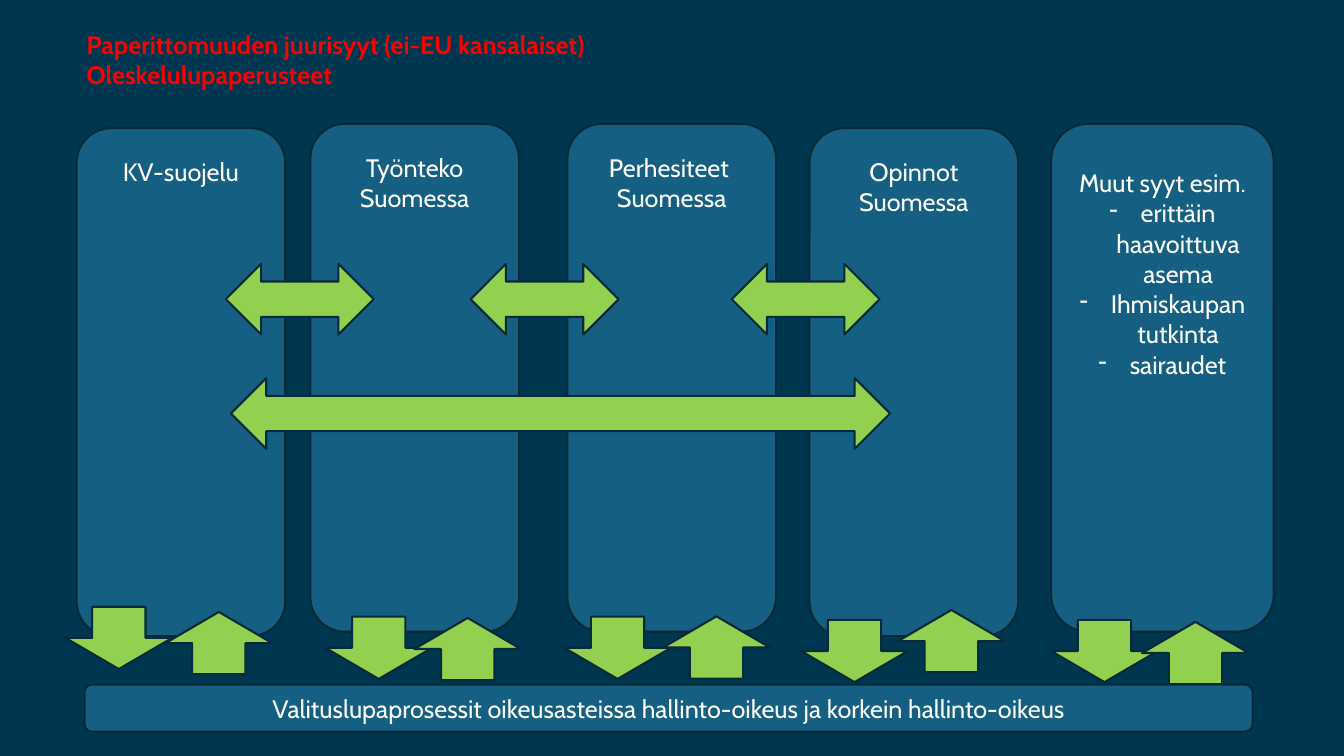
from dataclasses import dataclass

from lxml import etree
from pptx import Presentation
from pptx.dml.color import RGBColor
from pptx.enum.shapes import MSO_SHAPE
from pptx.enum.text import MSO_ANCHOR, MSO_AUTO_SIZE, PP_ALIGN
from pptx.oxml.ns import qn
from pptx.shapes.autoshape import Shape
from pptx.slide import Slide
from pptx.util import Cm, Pt

ROUNDED = MSO_SHAPE.ROUNDED_RECTANGLE
SIDEWAYS = MSO_SHAPE.LEFT_RIGHT_ARROW
DOWNWARD = MSO_SHAPE.DOWN_ARROW
LEFT, CENTER = PP_ALIGN.LEFT, PP_ALIGN.CENTER
TOP, MIDDLE = MSO_ANCHOR.TOP, MSO_ANCHOR.MIDDLE
FIT_SHAPE = MSO_AUTO_SIZE.SHAPE_TO_FIT_TEXT

NAVY = RGBColor(0x00, 0x37, 0x50)
BLUE = RGBColor(0x15, 0x60, 0x82)
OUTLINE = RGBColor(0x09, 0x2A, 0x39)
GREEN = RGBColor(0x92, 0xD0, 0x50)
RED = RGBColor(0xFF, 0x00, 0x00)
WHITE = RGBColor(0xFF, 0xFF, 0xFF)

FONT = "Cabin"
TEXT_SIZE = Pt(18)
BULLET_INDENT = Cm(0.79)
PILLAR_HEIGHT = 12.8


@dataclass(frozen=True)
class Box:
    left: float
    top: float
    width: float
    height: float


@dataclass(frozen=True)
class Pillar:
    left: float
    top: float
    lines: tuple[str, ...]
    bullets: tuple[str, ...] = ()
    width: float = 5.26
    text_margin: float = 0.46


@dataclass(frozen=True)
class AppealArrow:
    left: float
    top: float
    rotation: int = 0


TITLE = (
    "Paperittomuuden juurisyyt (ei-EU kansalaiset)",
    "Oleskelulupaperusteet",
)
TITLE_BOX = Box(1.93, 0.61, 13.94, 1.8)

PILLARS = (
    Pillar(1.93, 3.23, ("KV-suojelu",)),
    Pillar(7.82, 3.12, ("Työnteko Suomessa",)),
    Pillar(14.3, 3.12, ("Perhesiteet ", "Suomessa")),
    Pillar(20.4, 3.23, ("Opinnot Suomessa",)),
    Pillar(
        26.49,
        3.12,
        ("Muut syyt esim.",),
        ("erittäin haavoittuva asema", "Ihmiskaupan tutkinta", "sairaudet"),
        width=5.61,
        text_margin=0.83,
    ),
)

LINK_ARROWS = (
    *(Box(left, 6.65, 3.73, 1.78) for left in (5.69, 11.86, 18.44)),
    Box(5.82, 9.53, 16.61, 1.78),
)

APPEAL_ARROWS = (
    AppealArrow(1.65, 15.29),
    AppealArrow(8.2, 15.54),
    AppealArrow(14.22, 15.54),
    AppealArrow(20.19, 15.62),
    AppealArrow(26.49, 15.62),
    AppealArrow(4.17, 15.42, 180),
    AppealArrow(10.44, 15.57, 180),
    AppealArrow(16.71, 15.53, 180),
    AppealArrow(22.63, 15.37, 180),
    AppealArrow(28.78, 15.67, 180),
)

APPEALS = "Valituslupaprosessit oikeusasteissa hallinto-oikeus ja korkein hallinto-oikeus"
APPEALS_BOX = Box(2.13, 17.25, 29.44, 1.19)


def write_text(
    shape: Shape,
    lines: tuple[str, ...],
    *,
    bullets: tuple[str, ...] = (),
    color: RGBColor = WHITE,
    bold: bool = False,
    align: PP_ALIGN = CENTER,
    anchor: MSO_ANCHOR = MIDDLE,
    wrap: bool = True,
    top_margin: float = 0.13,
) -> None:
    frame = shape.text_frame
    frame.text = "\n".join(lines + bullets)
    frame.word_wrap = wrap
    frame.vertical_anchor = anchor
    frame.margin_top = Cm(top_margin)
    for index, paragraph in enumerate(frame.paragraphs):
        paragraph.alignment = align
        paragraph.line_spacing = 1.0
        paragraph.space_before = Pt(0)
        for run in paragraph.runs:
            run.font.name = FONT
            run.font.size = TEXT_SIZE
            run.font.bold = bold
            run.font.color.rgb = color
        if index >= len(lines):
            properties = paragraph._p.get_or_add_pPr()
            properties.set("marL", str(BULLET_INDENT))
            properties.set("indent", str(-BULLET_INDENT))
            etree.SubElement(properties, qn("a:buChar")).set("char", "-")


def add_block(slide: Slide, kind: MSO_SHAPE, box: Box, fill: RGBColor) -> Shape:
    shape = slide.shapes.add_shape(
        kind, Cm(box.left), Cm(box.top), Cm(box.width), Cm(box.height)
    )
    shape.shadow.inherit = False
    shape.fill.solid()
    shape.fill.fore_color.rgb = fill
    shape.line.color.rgb = OUTLINE
    shape.line.width = Pt(1.5)
    return shape


def add_title(slide: Slide) -> None:
    title = slide.shapes.title
    title.left, title.top = Cm(TITLE_BOX.left), Cm(TITLE_BOX.top)
    title.width, title.height = Cm(TITLE_BOX.width), Cm(TITLE_BOX.height)
    write_text(title, TITLE, color=RED, bold=True, align=LEFT, anchor=TOP, wrap=False)
    title.text_frame.auto_size = FIT_SHAPE


def add_pillar(slide: Slide, pillar: Pillar) -> None:
    box = Box(pillar.left, pillar.top, pillar.width, PILLAR_HEIGHT)
    write_text(
        add_block(slide, ROUNDED, box, BLUE),
        pillar.lines,
        bullets=pillar.bullets,
        anchor=TOP,
        top_margin=pillar.text_margin,
    )


def add_appeal_arrow(slide: Slide, arrow: AppealArrow) -> None:
    box = Box(arrow.left, arrow.top, 2.69, 1.57)
    add_block(slide, DOWNWARD, box, GREEN).rotation = arrow.rotation


def main() -> None:
    presentation = Presentation()
    presentation.slide_width, presentation.slide_height = Cm(33.87), Cm(19.05)
    slide = presentation.slides.add_slide(presentation.slide_layouts[5])
    slide.background.fill.solid()
    slide.background.fill.fore_color.rgb = NAVY

    add_title(slide)
    for pillar in PILLARS:
        add_pillar(slide, pillar)
    for box in LINK_ARROWS:
        add_block(slide, SIDEWAYS, box, GREEN)
    for arrow in APPEAL_ARROWS:
        add_appeal_arrow(slide, arrow)
    write_text(add_block(slide, ROUNDED, APPEALS_BOX, BLUE), (APPEALS,))

    presentation.save("out.pptx")


if __name__ == "__main__":
    main()
